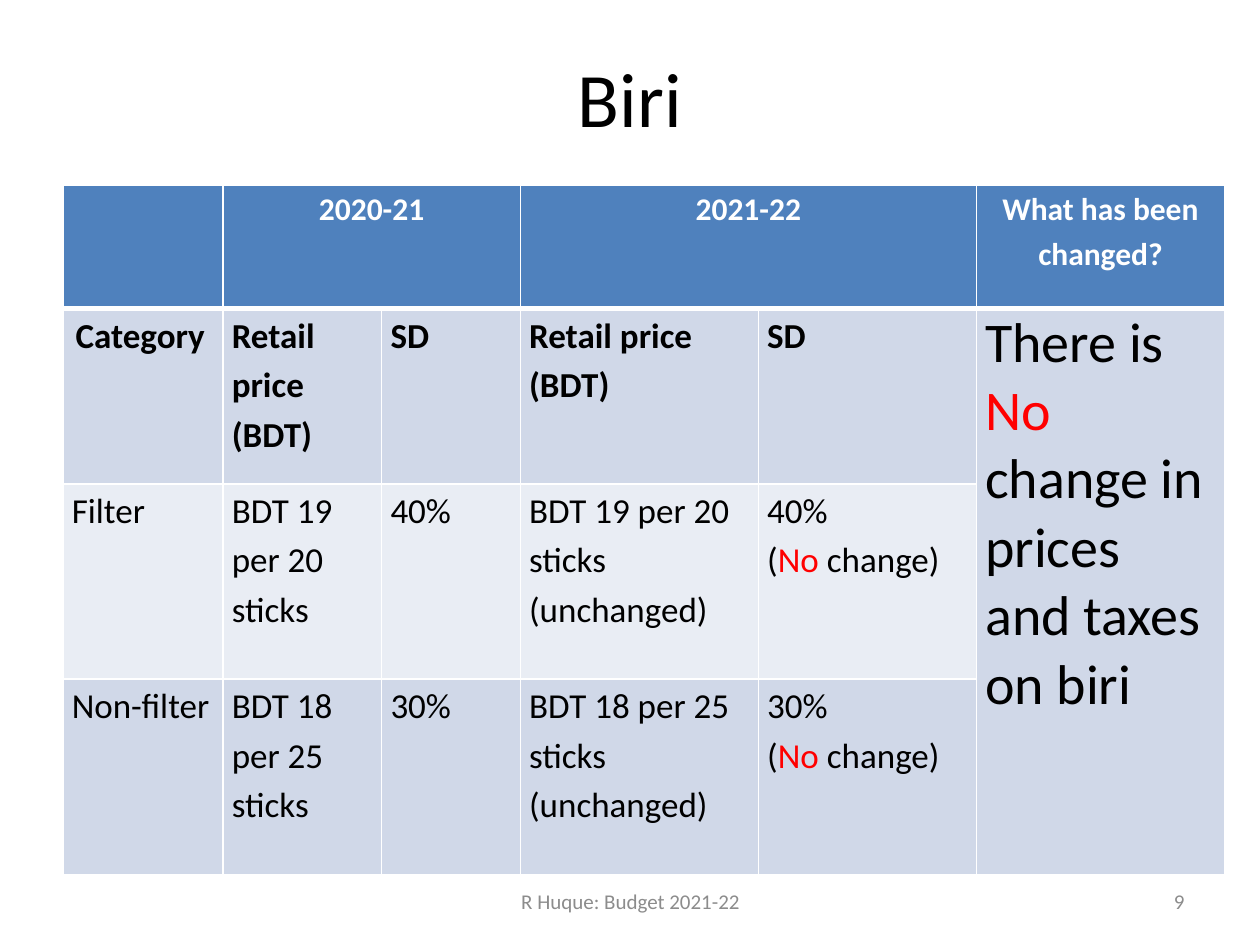
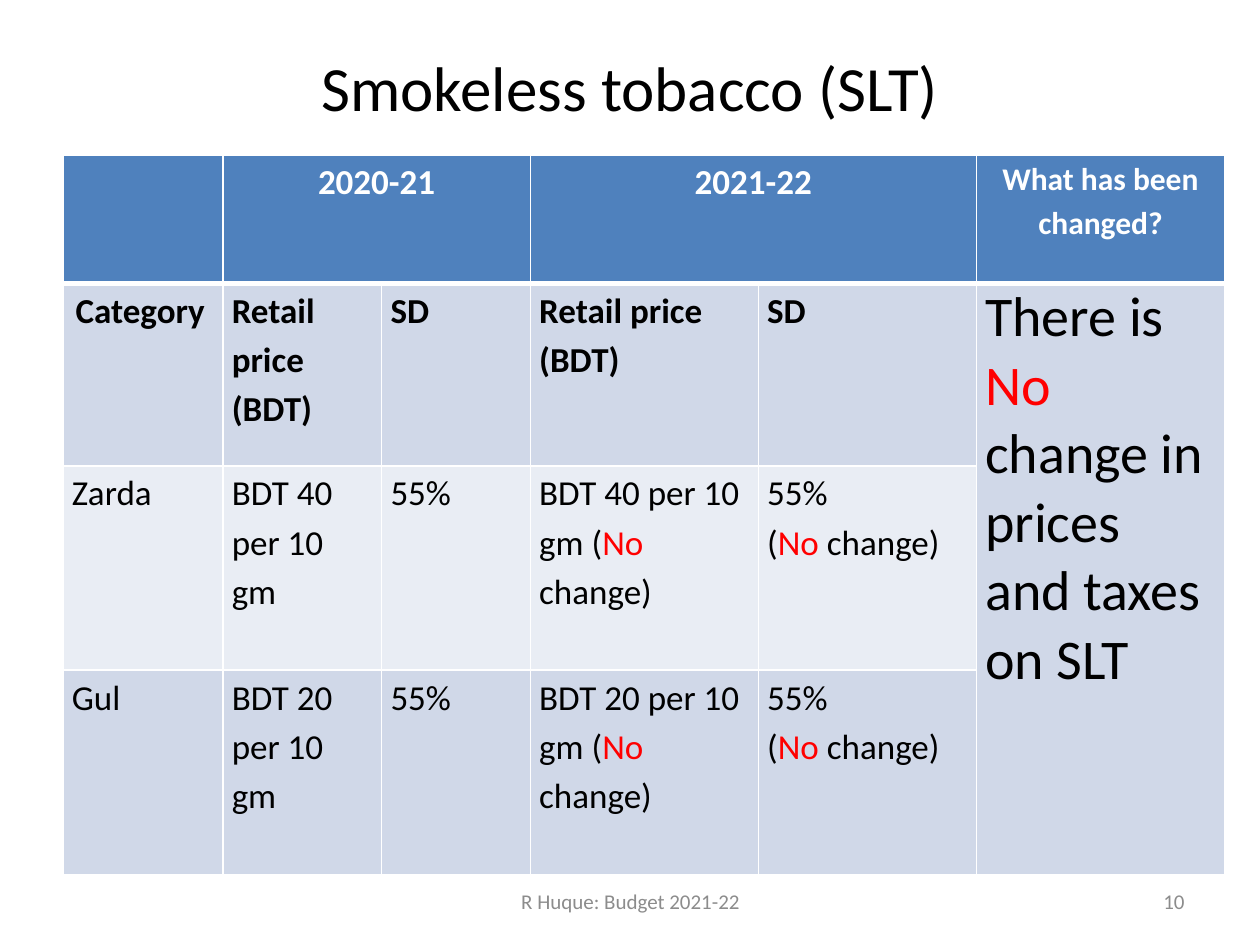
from dataclasses import dataclass

import pptx
import pptx.dml.color
import pptx.enum.text
import pptx.oxml.ns
import pptx.util
from lxml import etree

Inches = pptx.util.Inches
Align = pptx.enum.text.PP_ALIGN
Anchor = pptx.enum.text.MSO_ANCHOR


@dataclass(frozen=True)
class Theme:
    font: str = "Calibri"
    ink: str = "000000"
    white: str = "FFFFFF"
    accent: str = "FF0000"
    muted: str = "8C8C8C"
    header: str = "4F81BD"
    bands: tuple = ("E9EDF4", "D0D8E8")
    body_size: int = 20
    change_size: int = 18
    verdict_size: int = 32
    footer_size: int = 12
    line_spacing: float = 1.15


class Pages:
    """Holds the theme and the current slide, and draws each kind of element."""

    def __init__(self, theme):
        self.theme = theme
        self.deck = pptx.Presentation()
        self.deck.slide_width = Inches(10)
        self.deck.slide_height = Inches(7.5)

    def add_page(self):
        self.page = self.deck.slides.add_slide(self.deck.slide_layouts[6])

    def fill_para(self, para, text, size, color, bold=False, align=Align.LEFT, spacing=None):
        para.alignment = align
        para.line_spacing = spacing
        para.font.name = self.theme.font
        para.font.size = pptx.util.Pt(size)
        para.font.bold = bold
        para.font.color.rgb = pptx.dml.color.RGBColor.from_string(color)
        for index, piece in enumerate(text.split("*")):
            span = para.add_run()
            span.text = piece
            if index % 2:
                span.font.color.rgb = pptx.dml.color.RGBColor.from_string(self.theme.accent)

    def text(self, left, top, width, height, text, size, color, align=Align.CENTER):
        box = self.page.shapes.add_textbox(Inches(left), Inches(top), Inches(width), Inches(height))
        box.text_frame.word_wrap = True
        box.text_frame.vertical_anchor = Anchor.MIDDLE
        self.fill_para(box.text_frame.paragraphs[0], text, size, color, align=align)

    def footer(self, number):
        size, color = self.theme.footer_size, self.theme.muted
        self.text(3.42, 6.95, 3.17, 0.4, "R Huque: Budget 2021-22", size, color)
        self.text(7.17, 6.95, 2.33, 0.4, str(number), size, color, Align.RIGHT)

    def borders(self, cell, row):
        heavy = {0: "lnB", 1: "lnT"}.get(row)
        properties = cell._tc.get_or_add_tcPr()
        for side in ("lnL", "lnR", "lnT", "lnB"):
            width = pptx.util.Pt(3 if side == heavy else 1)
            line = etree.SubElement(properties, pptx.oxml.ns.qn(f"a:{side}"), w=str(int(width)))
            fill = etree.SubElement(line, pptx.oxml.ns.qn("a:solidFill"))
            etree.SubElement(fill, pptx.oxml.ns.qn("a:srgbClr"), val=self.theme.white)

    def cell_style(self, row, column, year_size):
        theme = self.theme
        style = dict(size=theme.body_size, color=theme.ink, bold=row < 2, spacing=theme.line_spacing)
        if row == 0:
            size = theme.change_size if column == 5 else year_size
            style.update(size=size, color=theme.white, align=Align.CENTER)
        elif column == 5:
            style.update(size=theme.verdict_size, bold=False, spacing=None)
        elif (row, column) == (1, 0):
            style.update(spacing=None)
        return style

    def price_table(self, top, columns, rows, year_size, content):
        frame = self.page.shapes.add_table(
            len(rows), len(columns), Inches(0.5), Inches(top), Inches(sum(columns)), Inches(sum(rows)))
        table = frame.table
        table.first_row = table.horz_banding = False
        for column, width in zip(table.columns, columns):
            column.width = Inches(width)
        for row, height in zip(table.rows, rows):
            row.height = Inches(height)
        for first, last in (((0, 1), (0, 2)), ((0, 3), (0, 4)), ((1, 5), (3, 5))):
            table.cell(*first).merge(table.cell(*last))
        for row, values in enumerate(content):
            color = self.theme.bands[row % 2] if row else self.theme.header
            for column, value in enumerate(values):
                cell = table.cell(row, column)
                self.borders(cell, row)
                cell.fill.solid()
                cell.fill.fore_color.rgb = pptx.dml.color.RGBColor.from_string(color)
                if (row, column) != (1, 0):
                    cell.margin_left = cell.margin_right = Inches(0.07)
                    cell.margin_top = cell.margin_bottom = 0
                if not value:
                    continue
                for index, line in enumerate(value.split("\n")):
                    para = cell.text_frame.add_paragraph() if index else cell.text_frame.paragraphs[0]
                    self.fill_para(para, line, **self.cell_style(row, column, year_size))


def product_row(name, price, duty, price_note):
    return [name, price, duty, f"{price} ({price_note})", f"{duty}\n(*No* change)", ""]


PRODUCTS = [
    dict(number=9, title="Biri", title_size=44, title_height=0.93, subject="biri",
         top=1.47, columns=[1.27, 1.26, 1.1, 1.89, 1.73, 1.97],
         rows=[0.98, 1.39, 1.55, 1.55], year_size=18,
         products=[product_row("Filter", "BDT 19 per 20 sticks", "40%", "unchanged"),
                   product_row("Non-filter", "BDT 18 per 25 sticks", "30%", "unchanged")]),
    dict(number=10, title="Smokeless tobacco (SLT)", title_size=36, title_height=0.77, subject="SLT",
         top=1.23, columns=[1.27, 1.26, 1.18, 1.81, 1.73, 1.97],
         rows=[1.02, 1.45, 1.62, 1.62], year_size=20,
         products=[product_row("Zarda", "BDT 40 per 10 gm", "55%", "*No* change"),
                   product_row("Gul", "BDT 20 per 10 gm", "55%", "*No* change")]),
]


def main():
    pages = Pages(Theme())
    for item in PRODUCTS:
        pages.add_page()
        pages.text(0.5, 0.3, 9, item["title_height"], item["title"], item["title_size"], pages.theme.ink)
        verdict = f"There is *No *change in prices and taxes on {item['subject']}"
        content = [
            ["", "2020-21", "", "2021-22", "", "What has been changed?"],
            ["Category", *["Retail price (BDT)", "SD"] * 2, verdict],
            *item["products"],
        ]
        pages.price_table(item["top"], item["columns"], item["rows"], item["year_size"], content)
        pages.footer(item["number"])
    pages.deck.save("out.pptx")


if __name__ == "__main__":
    main()
